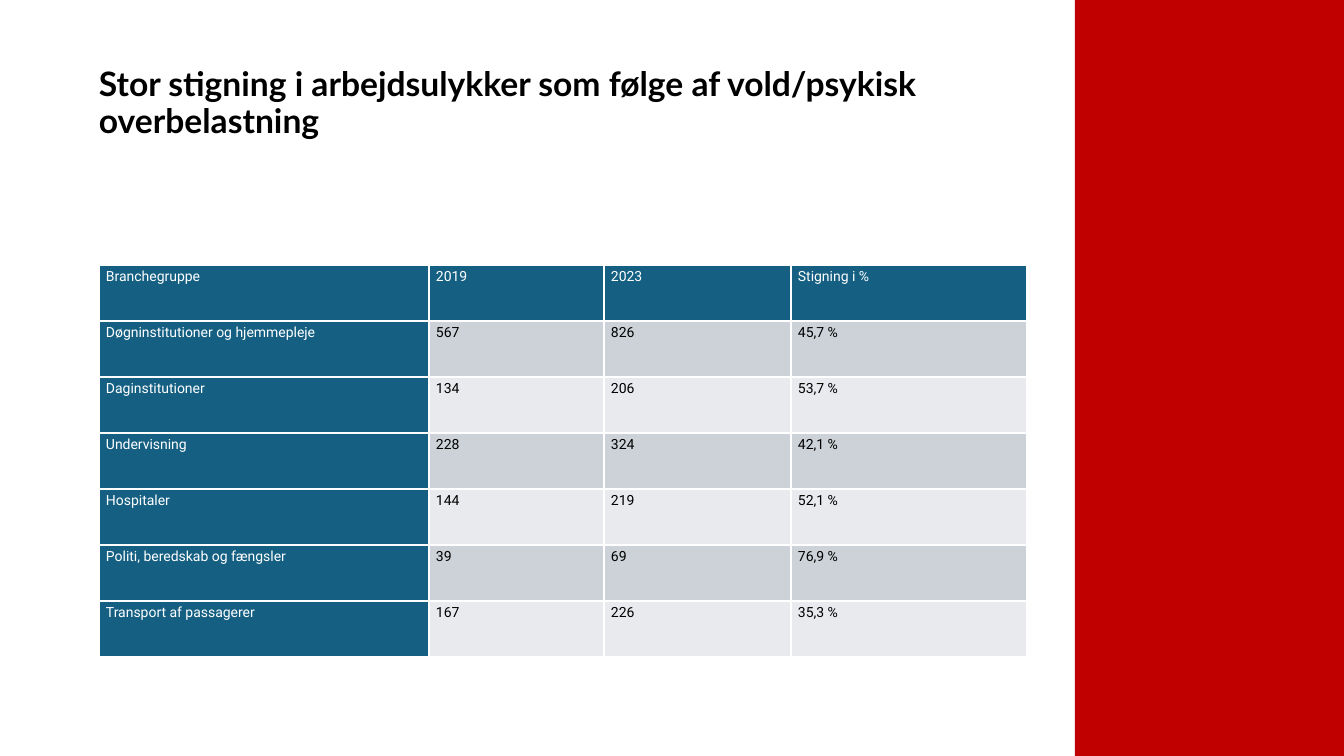
from dataclasses import dataclass

from lxml import etree
from pptx import Presentation
from pptx.dml.color import RGBColor
from pptx.enum.shapes import MSO_SHAPE
from pptx.enum.text import MSO_ANCHOR
from pptx.oxml.ns import qn
from pptx.util import Emu, Pt

RECTANGLE = MSO_SHAPE.RECTANGLE
MIDDLE = MSO_ANCHOR.MIDDLE

EMU_PER_PX = 914400 / 100.8
SLIDE_WIDTH, SLIDE_HEIGHT = 1344, 756

RED = RGBColor(0xC0, 0x00, 0x00)
BLUE = RGBColor(0x15, 0x60, 0x82)
DARK_BAND = RGBColor(0xCC, 0xD2, 0xD8)
LIGHT_BAND = RGBColor(0xE8, 0xEA, 0xED)
WHITE = RGBColor(0xFF, 0xFF, 0xFF)
BLACK = RGBColor(0x00, 0x00, 0x00)

TITLE = "Stor stigning i arbejdsulykker som følge af vold/psykisk overbelastning"
TITLE_FORMAT = {"name": "Lato", "size": Pt(24), "bold": True}
CELL_FORMAT = {"name": "Roboto", "size": Pt(10), "bold": False}
CELL_MARGINS = {"margin_left": 7, "margin_top": 0, "margin_right": 7, "margin_bottom": 0}
BORDER_TAGS = ("a:lnL", "a:lnR", "a:lnT", "a:lnB")

HEADERS = ("Branchegruppe", "2019", "2023", "Stigning i %")
COLUMN_WIDTHS = (330, 175, 187, 236)
ROW_HEIGHT = 56


@dataclass(frozen=True)
class Box:
    left: int
    top: int
    width: int
    height: int

    def emu(self) -> tuple[Emu, Emu, Emu, Emu]:
        return px(self.left), px(self.top), px(self.width), px(self.height)


@dataclass(frozen=True)
class Industry:
    name: str
    accidents_2019: int
    accidents_2023: int
    increase: str

    def texts(self) -> tuple[str, ...]:
        return self.name, str(self.accidents_2019), str(self.accidents_2023), self.increase


INDUSTRIES = (
    Industry("Døgninstitutioner og hjemmepleje", 567, 826, "45,7 %"),
    Industry("Daginstitutioner", 134, 206, "53,7 %"),
    Industry("Undervisning", 228, 324, "42,1 %"),
    Industry("Hospitaler", 144, 219, "52,1 %"),
    Industry("Politi, beredskab og fængsler", 39, 69, "76,9 %"),
    Industry("Transport af passagerer", 167, 226, "35,3 %"),
)

SIDE_PANEL = Box(1075, 0, SLIDE_WIDTH - 1075, SLIDE_HEIGHT)
TITLE_BOX = Box(89, 56, 967, 96)
TABLE_BOX = Box(99, 265, sum(COLUMN_WIDTHS), ROW_HEIGHT * (len(INDUSTRIES) + 1))


def px(length: int) -> Emu:
    return Emu(round(length * EMU_PER_PX))


def write_text(paragraph, text: str, color: RGBColor, line_spacing, font_format: dict) -> None:
    paragraph.line_spacing = line_spacing
    run = paragraph.add_run()
    run.text = text
    for name, value in font_format.items():
        setattr(run.font, name, value)
    run.font.color.rgb = color


def add_side_panel(slide) -> None:
    shape = slide.shapes.add_shape(RECTANGLE, *SIDE_PANEL.emu())
    shape.shadow.inherit = False
    shape.fill.solid()
    shape.fill.fore_color.rgb = RED
    shape.line.fill.background()


def add_title(slide) -> None:
    text_frame = slide.shapes.add_textbox(*TITLE_BOX.emu()).text_frame
    text_frame.word_wrap = True
    text_frame.vertical_anchor = MIDDLE
    write_text(text_frame.paragraphs[0], TITLE, BLACK, 0.9, TITLE_FORMAT)


def add_borders(cell) -> None:
    properties = cell._tc.get_or_add_tcPr()
    for tag in BORDER_TAGS:
        line = etree.SubElement(properties, qn(tag), w=str(Pt(1)))
        fill = etree.SubElement(line, qn("a:solidFill"))
        etree.SubElement(fill, qn("a:srgbClr"), val=str(WHITE))


def fill_cell(cell, text: str, background: RGBColor) -> None:
    for name, margin in CELL_MARGINS.items():
        setattr(cell, name, px(margin))
    add_borders(cell)
    cell.fill.solid()
    cell.fill.fore_color.rgb = background
    color = WHITE if background == BLUE else BLACK
    write_text(cell.text_frame.paragraphs[0], text, color, Pt(14), CELL_FORMAT)


def add_accident_table(slide) -> None:
    rows = (HEADERS, *(industry.texts() for industry in INDUSTRIES))
    table = slide.shapes.add_table(len(rows), len(HEADERS), *TABLE_BOX.emu()).table
    table.first_col = True
    for column, width in zip(table.columns, COLUMN_WIDTHS):
        column.width = px(width)
    for row_index, texts in enumerate(rows):
        table.rows[row_index].height = px(ROW_HEIGHT)
        band = DARK_BAND if row_index % 2 else LIGHT_BAND
        for column_index, text in enumerate(texts):
            is_heading = row_index == 0 or column_index == 0
            fill_cell(table.cell(row_index, column_index), text, BLUE if is_heading else band)


def main() -> None:
    presentation = Presentation()
    presentation.slide_width = px(SLIDE_WIDTH)
    presentation.slide_height = px(SLIDE_HEIGHT)
    slide = presentation.slides.add_slide(presentation.slide_layouts[6])
    add_side_panel(slide)
    add_title(slide)
    add_accident_table(slide)
    presentation.save("out.pptx")


if __name__ == "__main__":
    main()
